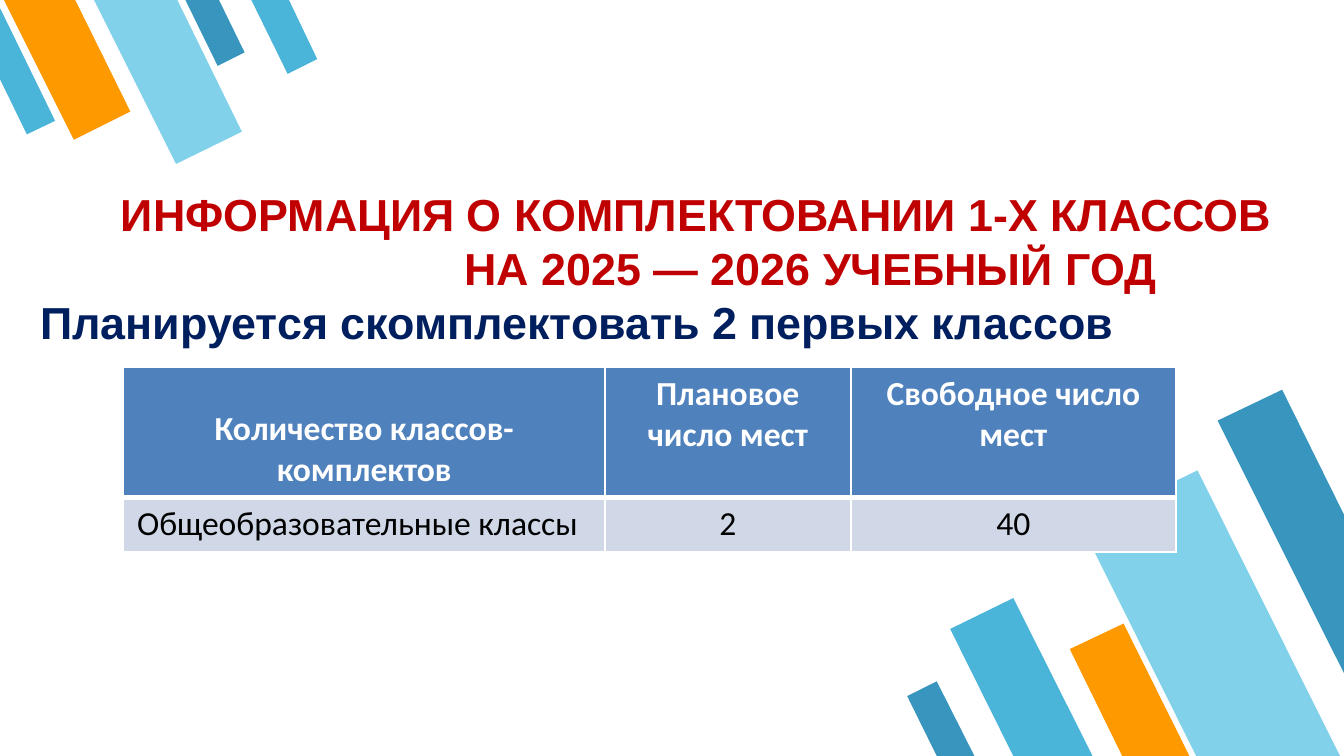
from lxml import etree
from pptx import Presentation
from pptx import util as u
from pptx.dml.color import RGBColor
from pptx.enum import text
from pptx.oxml.ns import qn

WHITE = RGBColor(0xFF, 0xFF, 0xFF)
BLACK = RGBColor(0, 0, 0)
RED = RGBColor(0xC0, 0, 0)
NAVY = RGBColor(0, 0x1F, 0x5F)
SKY = RGBColor(0x4A, 0xB5, 0xD9)
PALE = RGBColor(0x81, 0xD1, 0xEB)
ORANGE = RGBColor(0xFF, 0x99, 0)
STEEL = RGBColor(0x37, 0x95, 0xBE)
HEADER = RGBColor(0x4F, 0x81, 0xBD)
BODY = RGBColor(0xD0, 0xD8, 0xE7)

COLUMNS, ROWS = 100, 56.25

STRIPES = [
    (SKY, [[(75.4, 44.5), (70.7, 46.8), (75.4, ROWS), (81.3, ROWS)]]),
    (PALE, [[(89.1, 35), (80.5, 39.2), (89, ROWS), (99.7, ROWS)]]),
    (ORANGE, [[(83.6, 46.4), (79.6, 48.3), (83.5, ROWS), (88.5, ROWS)]]),
    (STEEL, [[(72.5, ROWS), (69.7, 50.7), (67.5, 51.8), (69.7, ROWS)],
             [(100, 38.3), (95.4, 29), (90.6, 31.3), (100, 50.1)]]),
    (STEEL, [[(16.3, 0), (13.8, 0), (16.2, 4.9), (18.2, 3.9)]]),
    (ORANGE, [[(5.6, 0), (0.3, 0), (5.5, 10.4), (9.7, 8.3)]]),
    (PALE, [[(13.2, 0), (7, 0), (13.1, 12.2), (18, 9.8)]]),
    (SKY, [[(21.5, 0), (18.7, 0), (21.4, 5.5), (23.6, 4.4)]]),
    (SKY, [[(0, 0.6), (0, 5.9), (2, 10), (4.1, 9)]]),
]

TITLE = "ИНФОРМАЦИЯ О КОМПЛЕКТОВАНИИ 1-Х КЛАССОВ НА 2025 — 2026 УЧЕБНЫЙ ГОД"
PLAN = "Планируется скомплектовать 2 первых классов"
PLACES = [
    ["Количество классов-комплектов", "Плановое число мест", "Свободное число мест"],
    ["Общеобразовательные классы", "2", "40"],
]


class SlideBuilder:
    heading_font, table_font = "Arial", "Calibri"
    heading_size, table_size = u.Pt(24), u.Pt(18)

    def __init__(self, deck):
        self.page = deck.slides.add_slide(deck.slide_layouts[6])
        self.unit = deck.slide_width / COLUMNS

    def length(self, cells):
        return u.Emu(round(cells * self.unit))

    def lengths(self, *cells):
        return [self.length(cell) for cell in cells]

    def stripe(self, color, outlines):
        first, *others = [[self.lengths(*point) for point in outline] for outline in outlines]
        builder = self.page.shapes.build_freeform(*first[0], scale=1.0)
        builder.add_line_segments(first[1:])
        for outline in others:
            builder.move_to(*outline[0])
            builder.add_line_segments(outline[1:])
        shape = builder.convert_to_shape()
        shape.shadow.inherit = False
        shape.fill.solid()
        shape.fill.fore_color.rgb = color
        shape.line.fill.background()

    def format_spans(self, para, font, size, color, bold):
        for span in para.runs:
            span.font.name = font
            span.font.size = size
            span.font.bold = bold
            span.font.color.rgb = color

    def headings(self, place, lines):
        box = self.page.shapes.add_textbox(*self.lengths(*place))
        frame = box.text_frame
        frame.word_wrap = True
        frame.margin_left = frame.margin_top = frame.margin_right = frame.margin_bottom = 0
        frame.text = "\n".join(words for words, *_ in lines)
        for para, (_, color, align, margin, indent) in zip(frame.paragraphs, lines):
            para.alignment = align
            properties = para._p.get_or_add_pPr()
            properties.set("marL", str(self.length(margin)))
            properties.set("indent", str(self.length(indent)))
            self.format_spans(para, self.heading_font, self.heading_size, color, True)
        frame.paragraphs[0].space_before = u.Pt(1)

    def border(self, cell, index, side, width):
        line = etree.Element(qn(f"a:ln{side}"), w=str(u.Pt(width)))
        fill = etree.SubElement(line, qn("a:solidFill"))
        etree.SubElement(fill, qn("a:srgbClr"), val=str(WHITE))
        cell._tc.get_or_add_tcPr().insert(index, line)

    def table(self, place, widths, heights, values):
        size = (sum(widths), sum(heights))
        frame = self.page.shapes.add_table(
            len(heights), len(widths), *self.lengths(*place, *size))
        grid = frame.table
        for column, width in zip(grid.columns, widths):
            column.width = self.length(width)
        for row, height in zip(grid.rows, heights):
            row.height = self.length(height)
        for i, row in enumerate(values):
            for j, value in enumerate(row):
                self.cell(grid.cell(i, j), value, i == 0, i > 0 and j == 0)
        grid.cell(0, 0).vertical_anchor = text.MSO_ANCHOR.BOTTOM

    def cell(self, cell, value, is_header, is_label):
        cell.text_frame.text = value
        cell.fill.solid()
        cell.fill.fore_color.rgb = HEADER if is_header else BODY
        para = cell.text_frame.paragraphs[0]
        para.alignment = text.PP_ALIGN.LEFT if is_label else text.PP_ALIGN.CENTER
        color = WHITE if is_header else BLACK
        self.format_spans(para, self.table_font, self.table_size, color, is_header)
        for index, side in enumerate("LRTB"):
            thick = (side == "B") if is_header else (side == "T")
            self.border(cell, index, side, 3 if thick else 0.96)


def main():
    deck = Presentation()
    deck.slide_width = u.Inches(10)
    deck.slide_height = u.Inches(5.625)
    builder = SlideBuilder(deck)
    for color, outlines in STRIPES:
        builder.stripe(color, outlines)
    builder.headings((3, 13.9, 93.9, 16.1), [
        (TITLE, RED, text.PP_ALIGN.CENTER, 20.7, -17),
        (PLAN, NAVY, text.PP_ALIGN.JUSTIFY, 0, 0),
    ])
    builder.table((9.2, 27.3), (35.8, 18.3, 24.2), (9.7, 4.1), PLACES)
    deck.save("out.pptx")


if __name__ == "__main__":
    main()
